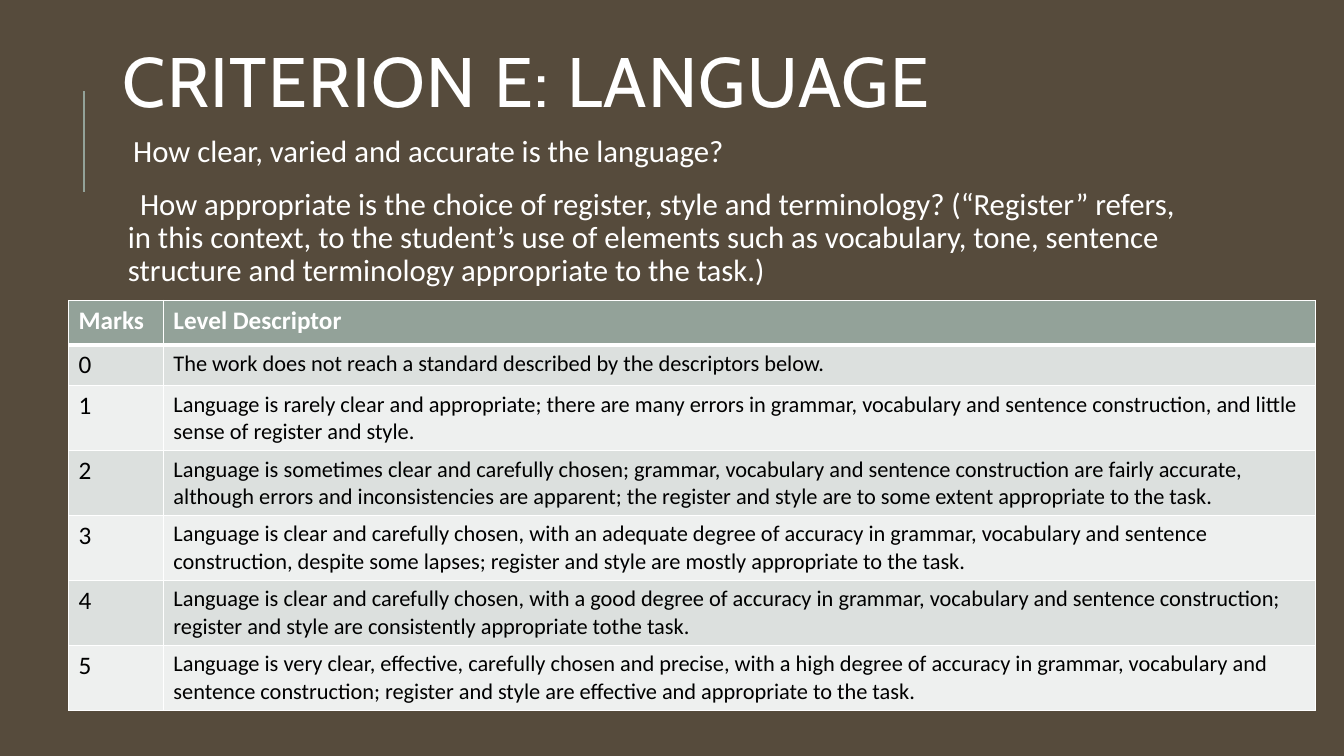
from lxml import etree
from pptx import Presentation
from pptx.dml.color import RGBColor
from pptx.enum.shapes import MSO_CONNECTOR
from pptx.enum.text import MSO_ANCHOR
from pptx.oxml.ns import qn
from pptx.util import Pt

STRAIGHT = MSO_CONNECTOR.STRAIGHT
MIDDLE, TOP = MSO_ANCHOR.MIDDLE, MSO_ANCHOR.TOP

TITLE = "CRITERION E: LANGUAGE"
QUESTIONS = [
    "How clear, varied and accurate is the language?",
    " How appropriate is the choice of register, style and terminology? (“Register” refers, "
    "in this context, to the student’s use of elements such as vocabulary, tone, sentence "
    "structure and terminology appropriate to the task.)",
]
LEVELS = [
    ("Marks", "Level Descriptor"),
    ("0", "The work does not reach a standard described by the descriptors below."),
    ("1", "Language is rarely clear and appropriate; there are many errors in grammar, "
          "vocabulary and sentence construction, and little sense of register and style."),
    ("2", "Language is sometimes clear and carefully chosen; grammar, vocabulary and sentence "
          "construction are fairly accurate, although errors and inconsistencies are apparent; "
          "the register and style are to some extent appropriate to the task."),
    ("3", "Language is clear and carefully chosen, with an adequate degree of accuracy in "
          "grammar, vocabulary and sentence construction, despite some lapses; register and "
          "style are mostly appropriate to the task."),
    ("4", "Language is clear and carefully chosen, with a good degree of accuracy in grammar, "
          "vocabulary and sentence construction; register and style are consistently "
          "appropriate tothe task."),
    ("5", "Language is very clear, effective, carefully chosen and precise, with a high degree "
          "of accuracy in grammar, vocabulary and sentence construction; register and style "
          "are effective and appropriate to the task."),
]
BROWN, SAGE, WHITE, BLACK = "564B3C", "93A299", "FFFFFF", "000000"
BANDS = ["EEF0EF", "DCE0DE"]
COLUMN_WIDTHS = [67.7, 823]
ROW_HEIGHTS = [31.7, 29.2] + [46.4] * 5


def rgb(value):
    return RGBColor.from_string(value)


def add_run(paragraph, text, size, color, font="Calibri", bold=False):
    run = paragraph.add_run()
    run.text = text
    run.font.size = Pt(size)
    run.font.name = font
    run.font.bold = bold
    run.font.color.rgb = rgb(color)
    return run


def add_text_frame(slide, left, top, width, height, anchor):
    frame = slide.shapes.add_textbox(Pt(left), Pt(top), Pt(width), Pt(height)).text_frame
    frame.word_wrap = True
    frame.vertical_anchor = anchor
    return frame


def add_blank_bullet(paragraph):
    """Give the paragraph a hanging indent with a space as its bullet."""
    properties = paragraph._p.get_or_add_pPr()
    properties.set("marL", str(Pt(7.2)))
    properties.set("indent", str(-Pt(7.2)))
    etree.SubElement(properties, qn("a:buChar")).set("char", " ")


def set_borders(cell, widths):
    """Draw white borders; widths are left, right, top, bottom."""
    properties = cell._tc.get_or_add_tcPr()
    for position, (side, width) in enumerate(zip("LRTB", widths)):
        border = etree.Element(qn(f"a:ln{side}"), w=str(Pt(width)))
        fill = etree.SubElement(border, qn("a:solidFill"))
        etree.SubElement(fill, qn("a:srgbClr")).set("val", WHITE)
        properties.insert(position, border)


def add_heading(slide):
    accent = slide.shapes.add_connector(STRAIGHT, Pt(60), Pt(137), Pt(60), Pt(65))
    accent.line.color.rgb = rgb(SAGE)
    accent.line.width = Pt(1.5)
    etree.SubElement(accent._element.spPr, qn("a:effectLst"))

    title = add_text_frame(slide, 80.6, 26, 765.4, 72.7, MIDDLE).paragraphs[0]
    title.line_spacing = 0.8
    run = add_run(title, TITLE, 50, WHITE, font="Cabin")
    run.font._element.set("spc", "100")


def add_questions(slide):
    frame = add_text_frame(slide, 80.6, 93.6, 765.4, 403.2, TOP)
    frame.margin_left = frame.margin_right = Pt(3.6)
    for index, question in enumerate(QUESTIONS):
        paragraph = frame.add_paragraph() if index else frame.paragraphs[0]
        paragraph.line_spacing = 0.9
        paragraph.space_before = Pt(12)
        paragraph.space_after = Pt(2)
        add_blank_bullet(paragraph)
        add_run(paragraph, question, 22, WHITE)


def add_levels(slide):
    table = slide.shapes.add_table(
        len(LEVELS), len(COLUMN_WIDTHS), Pt(49), Pt(214.6),
        Pt(sum(COLUMN_WIDTHS)), Pt(sum(ROW_HEIGHTS))).table
    for column, width in zip(table.columns, COLUMN_WIDTHS):
        column.width = Pt(width)
    for r, level in enumerate(LEVELS):
        table.rows[r].height = Pt(ROW_HEIGHTS[r])
        header = r == 0
        for c, text in enumerate(level):
            cell = table.cell(r, c)
            cell.fill.solid()
            cell.fill.fore_color.rgb = rgb(SAGE if header else BANDS[r % 2])
            set_borders(cell, (1, 1, 3 if r == 1 else 1, 3 if header else 1))
            add_run(cell.text_frame.paragraphs[0], text, 18 if header or c == 0 else 16,
                    WHITE if header else BLACK, bold=header)


def main():
    deck = Presentation()
    deck.slide_width, deck.slide_height = Pt(960), Pt(540)
    slide = deck.slides.add_slide(deck.slide_layouts[6])
    slide.background.fill.solid()
    slide.background.fill.fore_color.rgb = rgb(BROWN)
    add_heading(slide)
    add_questions(slide)
    add_levels(slide)
    deck.save("out.pptx")


if __name__ == "__main__":
    main()
